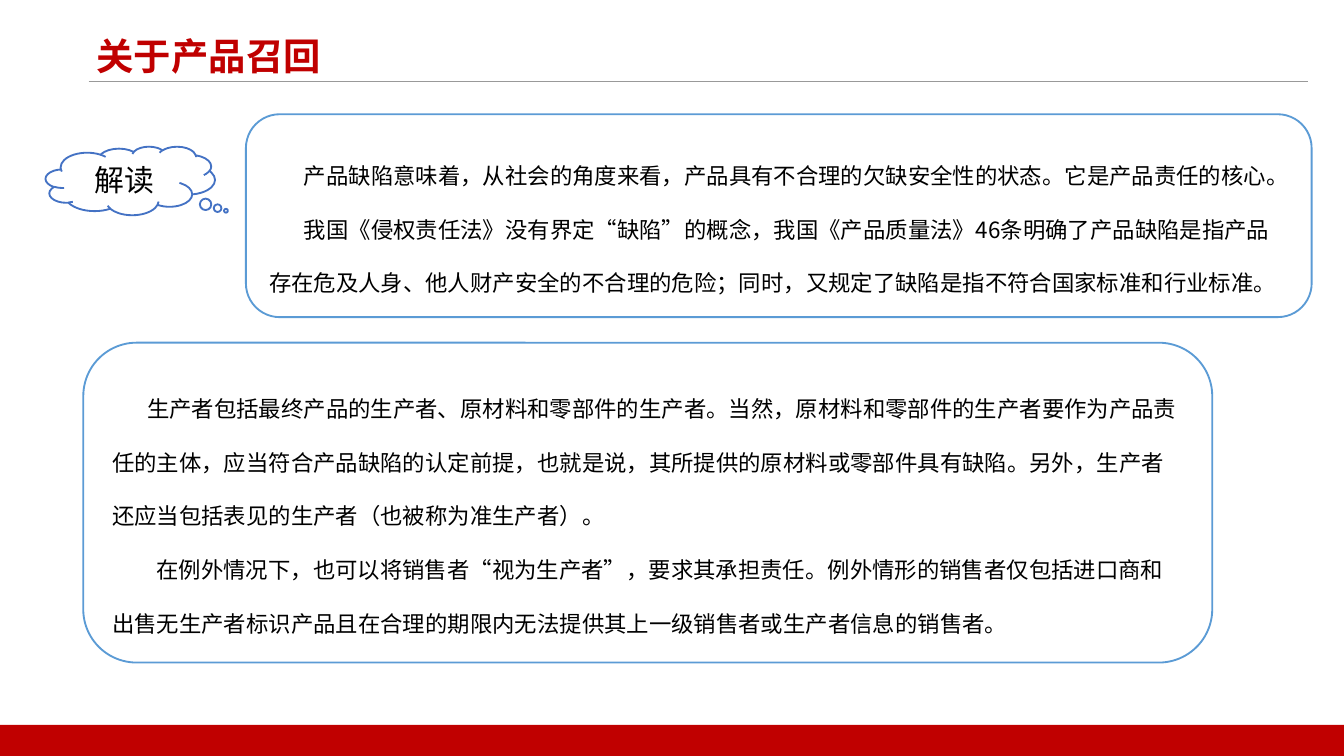
from pptx import Presentation
from pptx.dml.color import RGBColor
from pptx.enum.shapes import MSO_CONNECTOR, MSO_SHAPE
from pptx.enum.text import MSO_ANCHOR, PP_ALIGN
from pptx.oxml.ns import qn
from pptx.util import Inches, Pt
from lxml import etree

ROUNDED, CLOUD, BAR = MSO_SHAPE.ROUNDED_RECTANGLE, MSO_SHAPE.CLOUD_CALLOUT, MSO_SHAPE.RECTANGLE
LEFT, CENTER = PP_ALIGN.LEFT, PP_ALIGN.CENTER
FONT = "Noto Sans CJK SC"
RED, BLUE, CLOUD_BLUE = "C00000", "5B9BD5", "4472C4"
WHITE, BLACK, GRAY = "FFFFFF", "000000", "999999"
WIDTH = 10
HEIGHT = WIDTH * 9 / 16
FOOTER = 0.23

# Content: each panel has a place and paragraphs with their first-line indent
TITLE = "关于产品召回"
CALLOUT = "解读"
PANELS = [
    ((1.83, 0.85, 7.93, 1.51), [
        (0.26, "产品缺陷意味着，从社会的角度来看，产品具有不合理的欠缺安全性的状态。它是产品责任的核心。"),
        (0.26, "我国《侵权责任法》没有界定“缺陷”的概念，我国《产品质量法》46条明确了产品缺陷是指产品"
               "存在危及人身、他人财产安全的不合理的危险；同时，又规定了缺陷是指不符合国家标准和行业标准。"),
    ]),
    ((0.62, 2.55, 8.4, 2.38), [
        (0.26, "生产者包括最终产品的生产者、原材料和零部件的生产者。当然，原材料和零部件的生产者要作为产品责"
               "任的主体，应当符合产品缺陷的认定前提，也就是说，其所提供的原材料或零部件具有缺陷。另外，生产者"
               "还应当包括表见的生产者（也被称为准生产者）。"),
        (0.33, "在例外情况下，也可以将销售者“视为生产者”，要求其承担责任。例外情形的销售者仅包括进口商和"
               "出售无生产者标识产品且在合理的期限内无法提供其上一级销售者或生产者信息的销售者。"),
    ]),
]


def color(value):
    return RGBColor.from_string(value)


def add_box(page, kind, place, fill=None, line=None):
    box = page.shapes.add_shape(kind, *map(Inches, place))
    box.shadow.inherit = False
    if fill:
        box.fill.solid()
        box.fill.fore_color.rgb = color(fill)
    else:
        box.fill.background()
    if line:
        box.line.color.rgb = color(line)
        box.line.width = Pt(1)
    else:
        box.line.fill.background()
    return box


def write(para, text, size, ink=BLACK, bold=False, align=LEFT):
    para.text = text
    para.alignment = align
    for span in para.runs:
        span.font.size = Pt(size)
        span.font.bold = bold
        span.font.name = FONT
        span.font.color.rgb = color(ink)
        east_asian = etree.SubElement(span.font._element, qn("a:ea"))
        east_asian.set("typeface", FONT)


deck = Presentation()
deck.slide_width, deck.slide_height = Inches(WIDTH), Inches(HEIGHT)
page = deck.slides.add_slide(deck.slide_layouts[6])
page.background.fill.solid()
page.background.fill.fore_color.rgb = color(WHITE)

# Title and its rule
rule = page.shapes.add_connector(
    MSO_CONNECTOR.STRAIGHT, Inches(0.66), Inches(0.61), Inches(9.73), Inches(0.61))
rule.line.color.rgb = color(GRAY)
rule.line.width = Pt(0.5)
etree.SubElement(rule._element.spPr, qn("a:effectLst"))
title = page.shapes.add_textbox(Inches(0.62), Inches(0.2), Inches(2.08), Inches(0.51))
title.text_frame.word_wrap = True
write(title.text_frame.paragraphs[0], TITLE, 20, RED, bold=True)

# Footer bar along the bottom edge
add_box(page, BAR, (0, HEIGHT - FOOTER, WIDTH, FOOTER), RED)

# Cloud callout
cloud = add_box(page, CLOUD, (0.34, 1.09, 1.26, 0.51), WHITE, CLOUD_BLUE)
cloud.adjustments[0], cloud.adjustments[1] = 0.565, 0.438
cloud.text_frame.vertical_anchor = MSO_ANCHOR.MIDDLE
write(cloud.text_frame.paragraphs[0], CALLOUT, 16, align=CENTER)

# Text panels
for place, paragraphs in PANELS:
    frame = add_box(page, ROUNDED, place, line=BLUE).text_frame
    frame.word_wrap = True
    frame.vertical_anchor = MSO_ANCHOR.MIDDLE
    for index, (indent, text) in enumerate(paragraphs):
        para = frame.add_paragraph() if index else frame.paragraphs[0]
        write(para, text, 12)
        para.line_spacing = 2.0
        para._p.get_or_add_pPr().set("indent", str(Inches(indent)))

deck.save("out.pptx")
